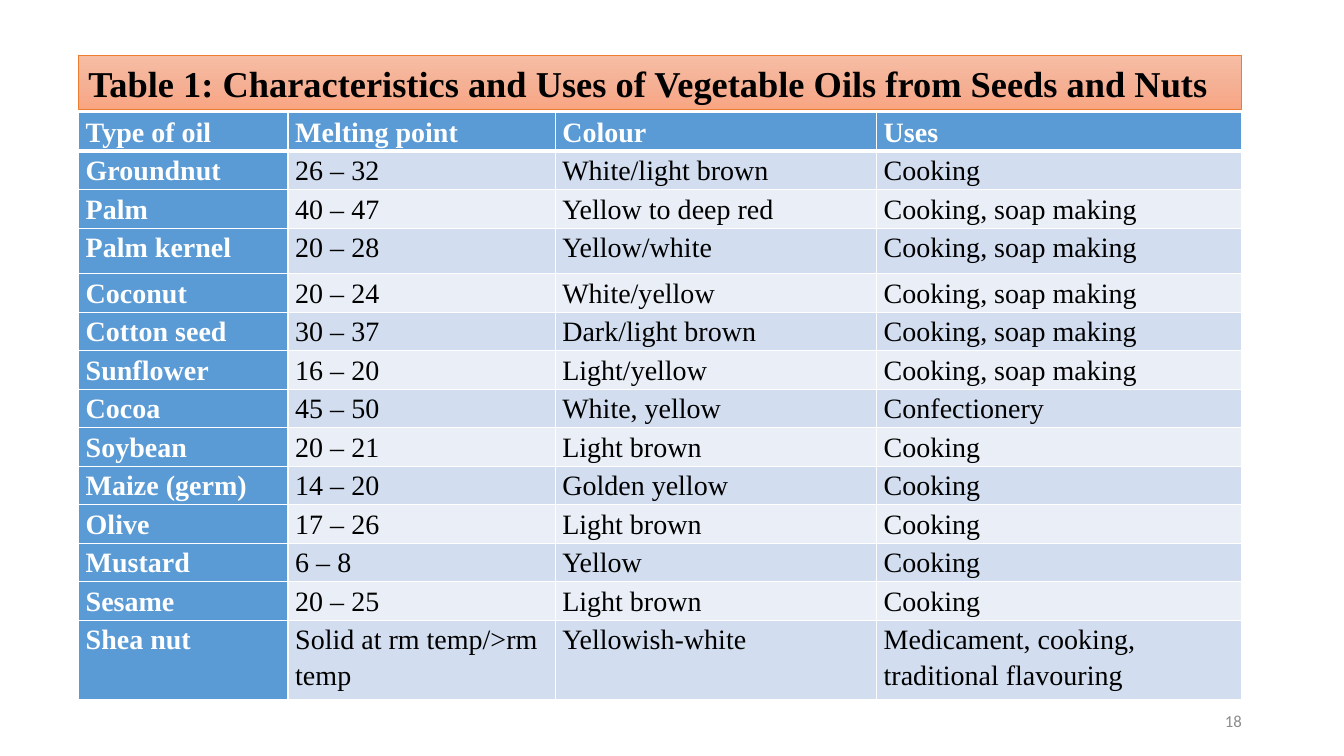
from copy import deepcopy
from dataclasses import dataclass

from lxml import etree
from pptx import Presentation
from pptx.dml.color import RGBColor
from pptx.enum.shapes import MSO_SHAPE
from pptx.enum.text import MSO_ANCHOR, PP_ALIGN
from pptx.oxml.ns import qn
from pptx.util import Cm, Pt

RECTANGLE = MSO_SHAPE.RECTANGLE
MIDDLE = MSO_ANCHOR.MIDDLE
LEFT, RIGHT = PP_ALIGN.LEFT, PP_ALIGN.RIGHT


@dataclass(frozen=True)
class Theme:
    font: str = "Times New Roman"
    number_font: str = "Calibri"
    title_size: int = 26
    table_size: int = 20
    number_size: int = 12
    black: str = "000000"
    white: str = "FFFFFF"
    grey: str = "8C8C8C"
    orange: str = "ED7D31"
    title_gradient: tuple = ("F7BDA5", "F5B196", "F8A582")
    blue: str = "5B9BD5"
    bands: tuple = ("D2DEEF", "EAEFF7")


THEME = Theme()
MARGIN, CONTENT_WIDTH = Cm(1.98), Cm(29.31)
TITLE = "Table 1: Characteristics and Uses of Vegetable Oils from Seeds and Nuts"
COLUMN_WIDTHS = (5.28, 6.73, 8.1, 9.2)
ROW_HEIGHT = 0.97
TALL_ROWS = {3: 1.15, 13: 2}
OILS = [
    ("Type of oil", "Melting point", "Colour", "Uses"),
    ("Groundnut", "26 – 32", "White/light brown", "Cooking"),
    ("Palm", "40 – 47", "Yellow to deep red", "Cooking, soap making"),
    ("Palm kernel", "20 – 28", "Yellow/white", "Cooking, soap making"),
    ("Coconut", "20 – 24", "White/yellow", "Cooking, soap making"),
    ("Cotton seed", "30 – 37", "Dark/light brown", "Cooking, soap making"),
    ("Sunflower", "16 – 20", "Light/yellow", "Cooking, soap making"),
    ("Cocoa", "45 – 50", "White, yellow", "Confectionery"),
    ("Soybean", "20 – 21", "Light brown", "Cooking"),
    ("Maize (germ)", "14 – 20", "Golden yellow", "Cooking"),
    ("Olive", "17 – 26", "Light brown", "Cooking"),
    ("Mustard", "6 – 8", "Yellow", "Cooking"),
    ("Sesame", "20 – 25", "Light brown", "Cooking"),
    ("Shea nut", "Solid at rm temp/>rm temp", "Yellowish-white",
     "Medicament, cooking, traditional flavouring"),
]


def rgb(color):
    return RGBColor.from_string(color)


def write(tf, text, size, color, bold=False, font=THEME.font, align=LEFT):
    tf.text = text
    p = tf.paragraphs[0]
    p.alignment = align
    f = p.runs[0].font
    f.name, f.size, f.bold = font, Pt(size), bold
    f.color.rgb = rgb(color)
    return p


def fill_gradient(sp, colors):
    """Fill a shape from top to bottom with three evenly spaced colours."""
    sp.fill.gradient()
    sp.fill.gradient_angle = 270
    first = sp.fill._xPr.find(".//" + qn("a:gs"))
    first.addnext(deepcopy(first))
    for i, (stop, color) in enumerate(zip(sp.fill.gradient_stops, colors)):
        stop.color.rgb = rgb(color)
        stop.position = i / (len(colors) - 1)


def add_title(slide):
    sp = slide.shapes.add_shape(RECTANGLE, MARGIN, Cm(1.4), CONTENT_WIDTH, Cm(1.37))
    sp.shadow.inherit = False
    fill_gradient(sp, THEME.title_gradient)
    sp.line.color.rgb = rgb(THEME.orange)
    sp.line.width = Pt(0.5)
    write(sp.text_frame, TITLE, THEME.title_size, THEME.black, bold=True)


def set_borders(cell, **widths):
    """Draw white cell borders; widths are points by side: L, R, T, B."""
    tcPr = cell._tc.get_or_add_tcPr()
    for side, width in widths.items():
        ln = etree.SubElement(tcPr, qn("a:ln" + side), w=str(Pt(width)))
        fill = etree.SubElement(ln, qn("a:solidFill"))
        etree.SubElement(fill, qn("a:srgbClr"), val=THEME.white)


def format_cell(cell, text, row, col):
    is_head = row == 0 or col == 0
    set_borders(cell, L=1, R=1, T=3 if row == 1 else 1, B=3 if row == 0 else 1)
    cell.fill.solid()
    cell.fill.fore_color.rgb = rgb(THEME.blue if is_head else THEME.bands[(row - 1) % 2])
    cell.margin_left = cell.margin_right = Cm(0.18)
    cell.margin_top = cell.margin_bottom = 0
    color = THEME.white if is_head else THEME.black
    p = write(cell.text_frame, text, THEME.table_size, color, bold=is_head)
    p.line_spacing = 1.15


def add_oil_table(slide):
    heights = [TALL_ROWS.get(i, ROW_HEIGHT) for i in range(len(OILS))]
    table = slide.shapes.add_table(len(OILS), len(COLUMN_WIDTHS), MARGIN, Cm(2.84),
                                   CONTENT_WIDTH, Cm(sum(heights))).table
    table.first_col = True
    for column, width in zip(table.columns, COLUMN_WIDTHS):
        column.width = Cm(width)
    for i, (oil, height) in enumerate(zip(OILS, heights)):
        table.rows[i].height = Cm(height)
        for j, text in enumerate(oil):
            format_cell(table.cell(i, j), text, i, j)


def add_slide_number(slide, number):
    tf = slide.shapes.add_textbox(Cm(23.93), Cm(17.65), Cm(7.62), Cm(1.02)).text_frame
    tf.word_wrap = True
    tf.vertical_anchor = MIDDLE
    write(tf, number, THEME.number_size, THEME.grey, font=THEME.number_font, align=RIGHT)


def main():
    prs = Presentation()
    prs.slide_width, prs.slide_height = Cm(33.87), Cm(19.05)
    slide = prs.slides.add_slide(prs.slide_layouts[6])
    add_title(slide)
    add_oil_table(slide)
    add_slide_number(slide, "18")
    prs.save("out.pptx")


if __name__ == "__main__":
    main()
